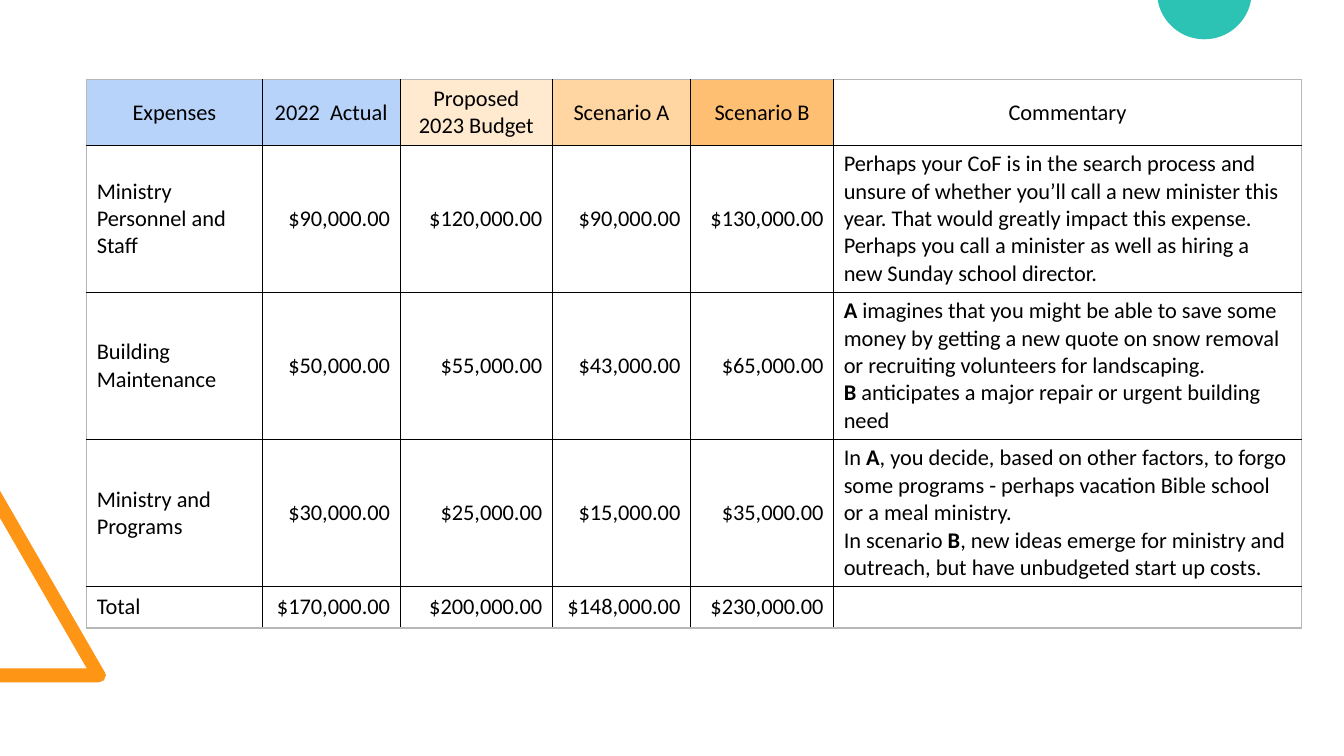
from math import cos, pi, sin

from lxml.etree import SubElement
from pptx import Presentation
from pptx.dml.color import RGBColor
from pptx.enum.text import MSO_ANCHOR as Anchor, PP_ALIGN as Align
from pptx.oxml.ns import qn
from pptx.util import Inches, Pt

BLACK = RGBColor(0x00, 0x00, 0x00)
GREY = RGBColor(0xB7, 0xB7, 0xB7)
WHITE = RGBColor(0xFF, 0xFF, 0xFF)
ORANGE = RGBColor(0xFF, 0x95, 0x14)
TEAL = RGBColor(0x2C, 0xC3, 0xB4)
BLUE = RGBColor(0xB8, 0xD3, 0xF9)
HEADER_FILLS = [BLUE, BLUE, RGBColor(0xFF, 0xEA, 0xD0), RGBColor(0xFF, 0xD5, 0xA1),
                RGBColor(0xFF, 0xBF, 0x72), WHITE]

COLUMN_WIDTHS = [1.74, 1.37, 1.51, 1.37, 1.42, 4.64]
ROW_HEIGHTS = [0.65, 1.46, 1.46, 1.46, 0.41]

# Asterisks enclose bold words; a line break starts a new paragraph
ROWS = [
    ["Expenses", "2022  Actual", "Proposed 2023 Budget", "Scenario A", "Scenario B", "Commentary"],
    ["Ministry Personnel and Staff", "$90,000.00", "$120,000.00", "$90,000.00", "$130,000.00",
     "Perhaps your CoF is in the search process and unsure of whether you’ll call a new "
     "minister this year. That would greatly impact this expense. Perhaps you call a "
     "minister as well as hiring a new Sunday school director."],
    ["Building Maintenance", "$50,000.00", "$55,000.00", "$43,000.00", "$65,000.00",
     "*A* imagines that you might be able to save some money by getting a new quote on "
     "snow removal or recruiting volunteers for landscaping.\n"
     "*B* anticipates a major repair or urgent building need"],
    ["Ministry and Programs", "$30,000.00", "$25,000.00", "$15,000.00", "$35,000.00",
     "In *A*, you decide, based on other factors, to forgo some programs - perhaps "
     "vacation Bible school or a meal ministry.\n"
     "In scenario *B*, new ideas emerge for ministry and outreach, but have unbudgeted "
     "start up costs."],
    ["Total", "$170,000.00", "$200,000.00", "$148,000.00", "$230,000.00", ""],
]


def add_outline(slide, points, color):
    points = [(Inches(x), Inches(y)) for x, y in points]
    builder = slide.shapes.build_freeform(*points[0])
    builder.add_line_segments(points[1:])
    shape = builder.convert_to_shape()
    shape.shadow.inherit = False
    shape.fill.solid()
    shape.fill.fore_color.rgb = color
    shape.line.fill.background()


def add_border(cell, side, color):
    line = SubElement(cell._tc.get_or_add_tcPr(), qn(f"a:ln{side}"), w=str(Pt(1)))
    fill = SubElement(line, qn("a:solidFill"))
    SubElement(fill, qn("a:srgbClr"), val=str(color))


presentation = Presentation()
presentation.slide_width = Inches(13.33)
presentation.slide_height = Inches(7.5)
slide = presentation.slides.add_slide(presentation.slide_layouts[6])

# Triangle frame with a rounded corner, cut by the left edge
add_outline(slide, [(0, 6.77), (0, 6.63), (0.86, 6.63), (0, 5.14), (0, 4.87), (1.04, 6.67),
                    (1.05, 6.7), (1.03, 6.75), (0.98, 6.77)], ORANGE)

# Circle cut by the top edge
radius, center_x, center_y = 0.47, 11.945, -0.08
start = math_start = 0.17
steps = 40
angles = [start + (pi - 2 * start) * step / steps for step in range(steps + 1)]
add_outline(slide, [(center_x + radius * cos(angle), center_y + radius * sin(angle))
                    for angle in angles], TEAL)

# Budget table
table = slide.shapes.add_table(
    len(ROWS), len(COLUMN_WIDTHS), Inches(0.86), Inches(0.79),
    Inches(sum(COLUMN_WIDTHS)), Inches(sum(ROW_HEIGHTS))).table
table.first_row = table.horz_banding = False
for column, width in zip(table.columns, COLUMN_WIDTHS):
    column.width = Inches(width)
for row, height in zip(table.rows, ROW_HEIGHTS):
    row.height = Inches(height)

last_row, last_column = len(ROWS) - 1, len(COLUMN_WIDTHS) - 1
for row_index, texts in enumerate(ROWS):
    for column_index, text in enumerate(texts):
        cell = table.cell(row_index, column_index)
        cell.vertical_anchor = Anchor.MIDDLE

        # Grey around the table, black between the cells
        outer_sides = {"L": column_index == 0, "R": column_index == last_column,
                       "T": row_index == 0, "B": row_index == last_row}
        for side, is_outer in outer_sides.items():
            add_border(cell, side, GREY if is_outer else BLACK)
        if row_index == 0:
            cell.fill.solid()
            cell.fill.fore_color.rgb = HEADER_FILLS[column_index]
        else:
            cell.fill.background()

        # Centred headings, right-aligned amounts, left-aligned words
        if row_index == 0:
            alignment = Align.CENTER
        elif 0 < column_index < last_column:
            alignment = Align.RIGHT
        else:
            alignment = Align.LEFT
        cell.text_frame.text = text.replace("*", "")
        for paragraph, line in zip(cell.text_frame.paragraphs, text.split("\n")):
            paragraph.alignment = alignment
            paragraph.text = ""
            for part_index, part in enumerate(line.split("*")):
                if part:
                    run = paragraph.add_run()
                    run.text = part
                    run.font.name = "Calibri"
                    run.font.size = Pt(16)
                    run.font.bold = part_index % 2 == 1
                    run.font.color.rgb = BLACK

presentation.save("out.pptx")
